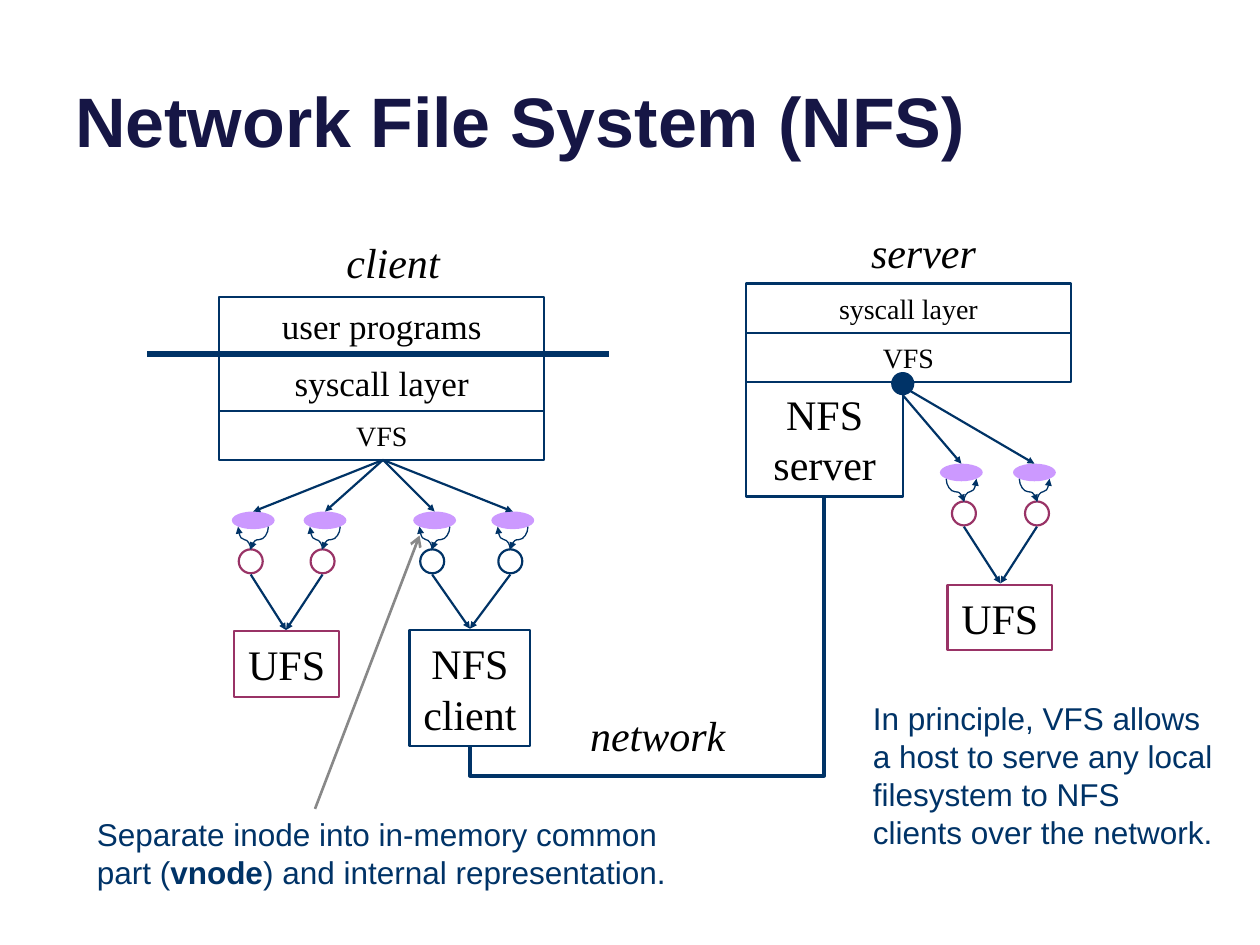
from dataclasses import dataclass

from lxml import etree
from pptx import Presentation
from pptx.dml.color import RGBColor
from pptx.enum.shapes import MSO_CONNECTOR, MSO_SHAPE
from pptx.enum.text import MSO_ANCHOR, MSO_AUTO_SIZE, PP_ALIGN
from pptx.oxml.ns import qn
from pptx.util import Inches, Pt

RECTANGLE, OVAL = MSO_SHAPE.RECTANGLE, MSO_SHAPE.OVAL
STRAIGHT, ELBOW, CURVE = MSO_CONNECTOR.STRAIGHT, MSO_CONNECTOR.ELBOW, MSO_CONNECTOR.CURVE
TOP, MIDDLE, BOTTOM = MSO_ANCHOR.TOP, MSO_ANCHOR.MIDDLE, MSO_ANCHOR.BOTTOM
LEFT, CENTER = PP_ALIGN.LEFT, PP_ALIGN.CENTER
GROW = MSO_AUTO_SIZE.SHAPE_TO_FIT_TEXT


@dataclass(frozen=True)
class Theme:
    title: str = "161645"
    ink: str = "000000"
    navy: str = "003366"
    note: str = "003367"
    plum: str = "993366"
    lilac: str = "CC99FF"
    gray: str = "888888"
    white: str = "FFFFFF"
    sans: str = "Arial"
    serif: str = "Times New Roman"
    title_size: int = 40
    large: int = 24
    medium: int = 20
    note_size: int = 18
    small: int = 16


def write(frame, text, *, size, font, color, align=CENTER, anchor=MIDDLE,
          bold=False, italic=False, wrap=True, grow=True):
    frame.word_wrap = wrap
    frame.vertical_anchor = anchor
    if grow:
        frame.auto_size = GROW
    for row, words in enumerate(text.split("\n")):
        para = frame.add_paragraph() if row else frame.paragraphs[0]
        para.alignment = align
        for part, piece in enumerate(words.split("**")):
            span = para.add_run()
            span.text = piece
            span.font.name = font
            span.font.size = Pt(size)
            span.font.bold = bold or part % 2 == 1
            span.font.italic = italic
            span.font.color.rgb = RGBColor.from_string(color)


class Diagram:
    def __init__(self, page, theme):
        self.page = page
        self.theme = theme

    def shape(self, kind, x, y, width, height, fill, line=None, weight=1.25, parent=None):
        owner = parent or self.page
        shape = owner.shapes.add_shape(kind, Inches(x), Inches(y), Inches(width), Inches(height))
        shape.shadow.inherit = False
        shape.fill.solid()
        shape.fill.fore_color.rgb = RGBColor.from_string(fill)
        if line:
            shape.line.color.rgb = RGBColor.from_string(line)
            shape.line.width = Pt(weight)
        else:
            shape.line.fill.background()
        return shape

    def box(self, text, x, y, width, height, size, line=None, wrap=True):
        theme = self.theme
        box = self.shape(RECTANGLE, x, y, width, height, theme.white, line or theme.navy)
        write(box.text_frame, text, size=size, font=theme.serif, color=theme.ink, wrap=wrap)

    def text(self, text, x, y, width, height, **style):
        box = self.page.shapes.add_textbox(Inches(x), Inches(y), Inches(width), Inches(height))
        write(box.text_frame, text, **style)

    def label(self, text, x, y, width):
        self.text(text, x, y, width, 0.5, size=self.theme.large, font=self.theme.serif,
                  color=self.theme.ink, italic=True, wrap=False)

    def note(self, text, x, y, width, height):
        self.text(text, x, y, width, height, size=self.theme.note_size, font=self.theme.sans,
                  color=self.theme.note, align=LEFT, anchor=TOP)

    def line(self, start, end, color=None, weight=1.25, head="triangle", head_size="sm",
             kind=STRAIGHT, parent=None):
        owner = parent or self.page
        line = owner.shapes.add_connector(kind, *(Inches(value) for value in (*start, *end)))
        line.line.color.rgb = RGBColor.from_string(color or self.theme.navy)
        line.line.width = Pt(weight)
        if head:
            etree.SubElement(line.line._get_or_add_ln(), qn("a:tailEnd"),
                             type=head, w=head_size, len=head_size)
        etree.SubElement(line._element.spPr, qn("a:effectLst"))
        return line

    def upright_line(self, start, end, bend, **style):
        across, down = end[0] - start[0], end[1] - start[1]
        middle_x, middle_y = (start[0] + end[0]) / 2, (start[1] + end[1]) / 2
        line = self.line((middle_x - down / 2, middle_y + across / 2),
                         (middle_x + down / 2, middle_y - across / 2), **style)
        properties = line._element.spPr
        properties.find(qn("a:xfrm")).set("rot", "5400000")
        geometry = properties.find(qn("a:prstGeom"))
        adjustments = geometry.find(qn("a:avLst"))
        if adjustments is None:
            adjustments = etree.SubElement(geometry, qn("a:avLst"))
        etree.SubElement(adjustments, qn("a:gd"), name="adj1", fmla=f"val {round(bend * 100000)}")

    def vnode(self, x, y, color, mirrored=False):
        theme, width, inode = self.theme, 0.34, 0.19
        group = self.page.shapes.add_group_shape()

        def place(offset):
            return x + (width - offset if mirrored else offset)

        self.shape(OVAL, place(0.19) - inode / 2, y + 0.3, inode, inode, theme.white, color,
                   parent=group)
        self.shape(OVAL, x, y, width, 0.14, theme.lilac, parent=group)
        down, meet, up = (place(0.05), y + 0.12), (place(0.19), y + 0.3), (place(0.29), y + 0.12)
        for start, end, bend in ((down, meet, 0.57), (meet, up, 0.43)):
            self.upright_line(start, end, bend, weight=0.75, kind=CURVE, parent=group)
        return place(0.19), y + 0.5


def draw_server(diagram, theme):
    x, width, row = 5.92, 2.58, 0.39
    top = 3.68
    ufs = (7.94, 4.63)
    diagram.box("syscall layer", x, 2.25, width, row, theme.small)
    diagram.box("UFS", 7.52, 4.64, 0.83, 0.52, theme.large, theme.plum, wrap=False)
    for start, oval_x in (((7.16, 3.13), 7.46), ((7.22, 3.1), 8.04)):
        inode = diagram.vnode(oval_x, top, theme.plum)
        diagram.line(start, (oval_x + 0.17, top))
        diagram.line(inode, ufs)
    diagram.box("NFS\nserver", x, 3.02, 1.25, 0.92, theme.large)
    diagram.box("VFS", x, 2.25 + row, width, row, theme.small)
    diagram.shape(OVAL, 7.08, 2.96, 0.17, 0.17, theme.note, theme.note, 1)
    diagram.label("server", 6.78, 1.75, 1.1)


def draw_client(diagram, theme):
    x, width, row = 1.74, 2.58, 0.45
    top = 4.06
    vfs, ufs, nfs = (3.04, 3.65), (2.27, 5), (3.73, 4.99)
    diagram.box("VFS", x, 3.26, width, 0.39, theme.small)
    diagram.box("NFS\nclient", 3.25, 5, 0.96, 0.92, theme.large, wrap=False)
    diagram.box("UFS", 1.86, 5.01, 0.83, 0.52, theme.large, theme.plum, wrap=False)
    for oval_x, color, target in ((1.84, theme.plum, ufs), (2.41, theme.plum, ufs),
                                  (3.28, theme.navy, nfs), (3.9, theme.navy, nfs)):
        inode = diagram.vnode(oval_x, top, color, mirrored=True)
        diagram.line(vfs, (oval_x + 0.17, top))
        diagram.line(inode, target)
    for index, name in enumerate(("user programs", "syscall layer")):
        diagram.box(name, x, 2.36 + index * row, width, row, theme.medium)
    diagram.line((1.17, 2.81), (4.83, 2.81), theme.note, 3, head=None)
    diagram.label("client", 2.62, 1.83, 1)


def main():
    theme = Theme()
    deck = Presentation()
    deck.slide_width, deck.slide_height = Inches(10), Inches(7.5)
    diagram = Diagram(deck.slides.add_slide(deck.slide_layouts[6]), theme)

    diagram.text("Network File System (NFS)", 0.5, -0.37, 9, 1.7, size=theme.title_size,
                 font=theme.sans, color=theme.title, align=LEFT, anchor=BOTTOM,
                 bold=True, grow=False)
    draw_server(diagram, theme)
    draw_client(diagram, theme)
    diagram.upright_line((3.73, 5.92), (6.54, 3.95), -0.12, color=theme.note, weight=2.25,
                         head=None, kind=ELBOW)
    diagram.label("network", 4.47, 5.58, 1.5)
    diagram.note("Separate inode into in-memory common part (**vnode**) and internal "
                 "representation.", 0.67, 6.42, 4.75, 0.71)
    diagram.line((2.5, 6.42), (3.33, 4.25), theme.gray, 1.5, head="arrow", head_size="med")
    diagram.note("In principle, VFS allows a host to serve any local filesystem to NFS "
                 "clients over the network.", 6.83, 5.5, 2.92, 1.31)
    deck.save("out.pptx")


if __name__ == "__main__":
    main()
